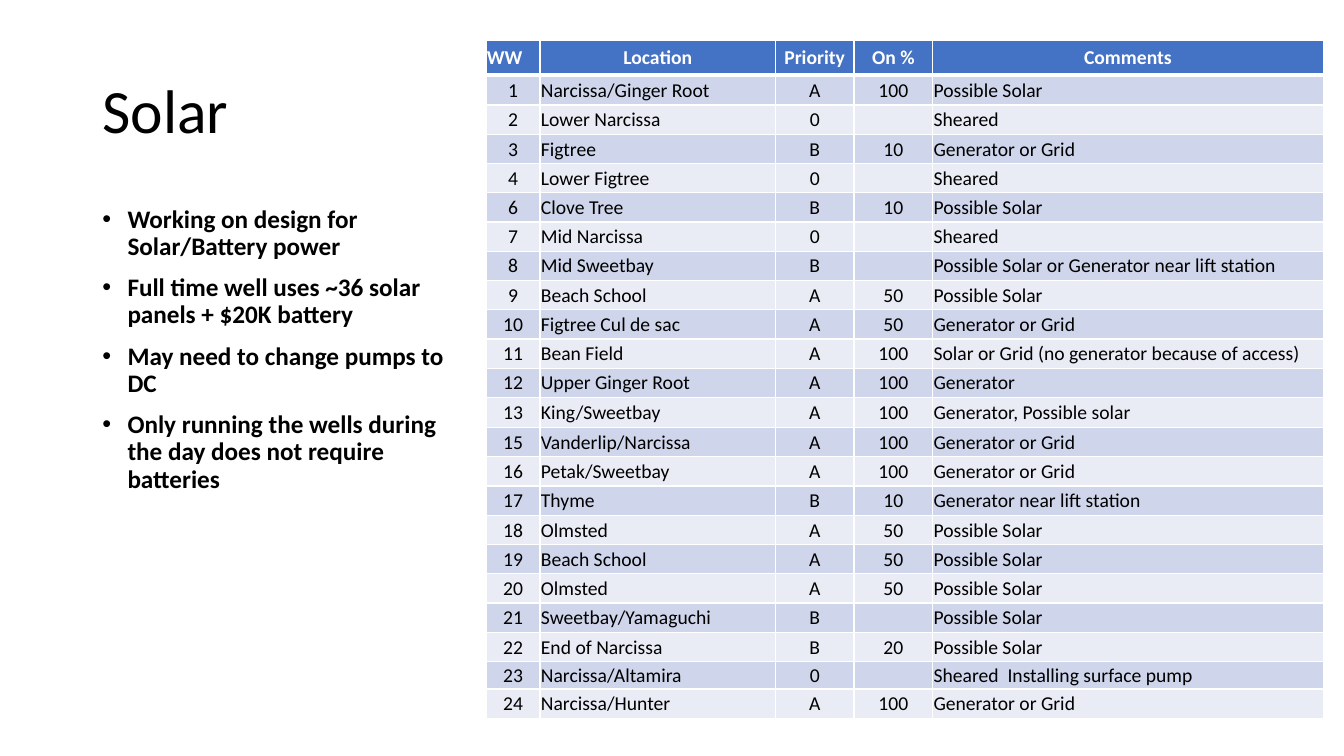
from dataclasses import dataclass
from typing import NamedTuple

from lxml import etree
from pptx import Presentation
from pptx.dml.color import RGBColor
from pptx.enum.text import MSO_ANCHOR, PP_ALIGN
from pptx.oxml.ns import qn
from pptx.util import Pt

LEFT, CENTER = PP_ALIGN.LEFT, PP_ALIGN.CENTER
TOP, MIDDLE = MSO_ANCHOR.TOP, MSO_ANCHOR.MIDDLE


@dataclass(frozen=True)
class Theme:
    font: str = "Calibri"
    text: str = "000000"
    header_text: str = "FFFFFF"
    header_fill: str = "4472C4"
    bands: tuple[str, str] = ("CFD5EA", "E9EBF5")
    border: str = "FFFFFF"
    title_size: float = 44
    bullet_size: float = 18
    table_size: float = 14


class Box(NamedTuple):
    left: float
    top: float
    width: float
    height: float


class Column(NamedTuple):
    heading: str
    width: float
    heading_align: PP_ALIGN
    align: PP_ALIGN


class Well(NamedTuple):
    number: str
    location: str
    priority: str
    on_percent: str
    comment: str


THEME = Theme()
SLIDE_WIDTH, SLIDE_HEIGHT = 960, 540
TITLE_BOX = Box(66, 28.8, 261.5, 104.4)
BULLET_BOX = Box(66, 144, 261.5, 367.2)
TABLE_LEFT, TABLE_TOP = 347.2, 29
HEADER_HEIGHT, ROW_HEIGHT = 24.5, 20.9
SPECIAL_HEIGHTS = {"1": 21.5, "13": 21.5, "23": 19.7}
THIN, THICK = 1, 3
CELL_INSET = 0.6

BULLETS = [
    "Working on design for Solar/Battery power",
    "Full time well uses ~36 solar panels + $20K battery",
    "May need to change pumps to DC",
    "Only running the wells during the day does not require batteries",
]

COLUMNS = [
    Column("WW", 38.6, LEFT, CENTER),
    Column("Location", 168.1, CENTER, LEFT),
    Column("Priority", 56.2, CENTER, CENTER),
    Column("On %", 56.2, CENTER, CENTER),
    Column("Comments", 279, CENTER, LEFT),
]

WELLS = [
    Well("1", "Narcissa/Ginger Root", "A", "100", "Possible Solar"),
    Well("2", "Lower Narcissa", "0", "", "Sheared"),
    Well("3", "Figtree", "B", "10", "Generator or Grid"),
    Well("4", "Lower Figtree", "0", "", "Sheared"),
    Well("6", "Clove Tree", "B", "10", "Possible Solar"),
    Well("7", "Mid Narcissa", "0", "", "Sheared"),
    Well("8", "Mid Sweetbay", "B", "", "Possible Solar or Generator near lift station"),
    Well("9", "Beach School", "A", "50", "Possible Solar"),
    Well("10", "Figtree Cul de sac", "A", "50", "Generator or Grid"),
    Well("11", "Bean Field", "A", "100", "Solar or Grid (no generator because of access)"),
    Well("12", "Upper Ginger Root", "A", "100", "Generator"),
    Well("13", "King/Sweetbay", "A", "100", "Generator, Possible solar"),
    Well("15", "Vanderlip/Narcissa", "A", "100", "Generator or Grid"),
    Well("16", "Petak/Sweetbay", "A", "100", "Generator or Grid"),
    Well("17", "Thyme", "B", "10", "Generator near lift station"),
    Well("18", "Olmsted", "A", "50", "Possible Solar"),
    Well("19", "Beach School", "A", "50", "Possible Solar"),
    Well("20", "Olmsted", "A", "50", "Possible Solar"),
    Well("21", "Sweetbay/Yamaguchi", "B", "", "Possible Solar"),
    Well("22", "End of Narcissa", "B", "20", "Possible Solar"),
    Well("23", "Narcissa/Altamira", "0", "", "Sheared  Installing surface pump"),
    Well("24", "Narcissa/Hunter", "A", "100", "Generator or Grid"),
]


def add_run(p, text: str, size: float, color: str, bold: bool = False) -> None:
    r = p.add_run()
    r.text = text
    r.font.name = THEME.font
    r.font.size = Pt(size)
    r.font.bold = bold
    r.font.color.rgb = RGBColor.from_string(color)


def add_text_frame(s, box: Box, anchor: MSO_ANCHOR):
    tf = s.shapes.add_textbox(*map(Pt, box)).text_frame
    tf.word_wrap = True
    tf.vertical_anchor = anchor
    return tf


def add_title(s) -> None:
    p = add_text_frame(s, TITLE_BOX, MIDDLE).paragraphs[0]
    p.line_spacing = 0.9
    add_run(p, "Solar", THEME.title_size, THEME.text)


def add_bullets(s) -> None:
    tf = add_text_frame(s, BULLET_BOX, TOP)
    for i, text in enumerate(BULLETS):
        p = tf.add_paragraph() if i else tf.paragraphs[0]
        p.line_spacing = 0.9
        p.space_before = Pt(10)
        pPr = p._p.get_or_add_pPr()
        pPr.set("marL", str(Pt(18)))
        pPr.set("indent", str(Pt(-18)))
        etree.SubElement(pPr, qn("a:buFont"), typeface="Arial")
        etree.SubElement(pPr, qn("a:buChar"), char="•")
        add_run(p, text, THEME.bullet_size, THEME.text, bold=True)


def set_borders(cell, top: float, bottom: float) -> None:
    tcPr = cell._tc.get_or_add_tcPr()
    for side, width in (("L", THIN), ("R", THIN), ("T", top), ("B", bottom)):
        ln = etree.SubElement(tcPr, qn(f"a:ln{side}"), w=str(Pt(width)))
        fill = etree.SubElement(ln, qn("a:solidFill"))
        etree.SubElement(fill, qn("a:srgbClr"), val=THEME.border)


def fill_cell(cell, text: str, align: PP_ALIGN, row: int) -> None:
    header = row == 0
    set_borders(cell, THICK if row == 1 else THIN, THICK if header else THIN)
    cell.fill.solid()
    color = THEME.header_fill if header else THEME.bands[(row - 1) % 2]
    cell.fill.fore_color.rgb = RGBColor.from_string(color)
    cell.margin_left = cell.margin_right = cell.margin_top = Pt(CELL_INSET)
    cell.margin_bottom = Pt(0)
    cell.vertical_anchor = MIDDLE
    p = cell.text_frame.paragraphs[0]
    p.alignment = align
    if text:
        add_run(p, text, THEME.table_size,
                THEME.header_text if header else THEME.text, bold=header)
    else:
        etree.SubElement(p._p, qn("a:endParaRPr"), sz=str(int(THEME.table_size * 100)))


def add_well_table(s) -> None:
    heights = [HEADER_HEIGHT] + [SPECIAL_HEIGHTS.get(w.number, ROW_HEIGHT) for w in WELLS]
    box = Box(TABLE_LEFT, TABLE_TOP, sum(c.width for c in COLUMNS), sum(heights))
    table = s.shapes.add_table(len(heights), len(COLUMNS), *map(Pt, box)).table
    for row, height in enumerate(heights):
        table.rows[row].height = Pt(height)
    for col, column in enumerate(COLUMNS):
        table.columns[col].width = Pt(column.width)
        fill_cell(table.cell(0, col), column.heading, column.heading_align, 0)
        for row, well in enumerate(WELLS, start=1):
            fill_cell(table.cell(row, col), well[col], column.align, row)


def main() -> None:
    prs = Presentation()
    prs.slide_width, prs.slide_height = Pt(SLIDE_WIDTH), Pt(SLIDE_HEIGHT)
    s = prs.slides.add_slide(prs.slide_layouts[6])
    add_title(s)
    add_bullets(s)
    add_well_table(s)
    prs.save("out.pptx")


if __name__ == "__main__":
    main()
